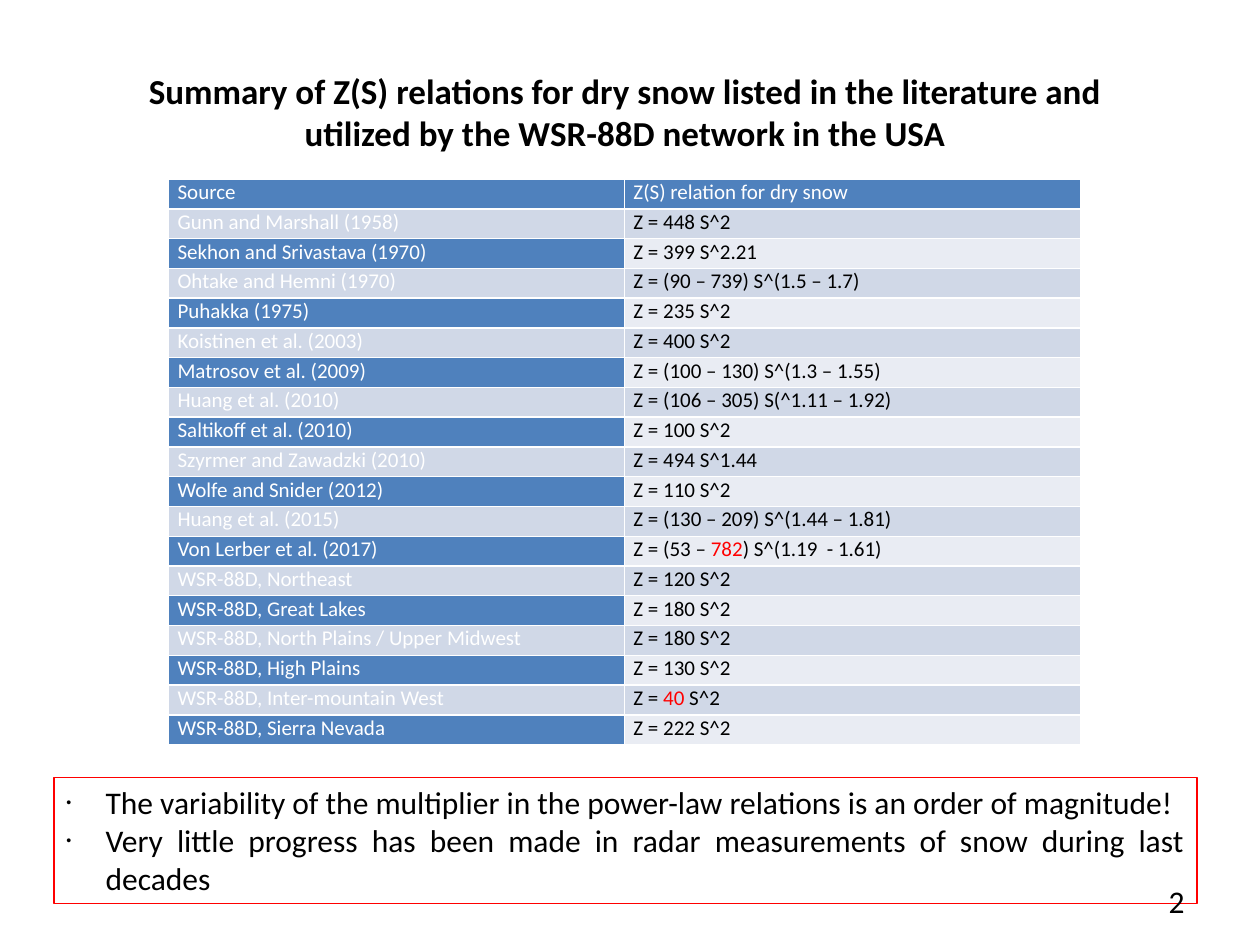
from lxml import etree
from pptx import Presentation
from pptx.dml.color import RGBColor
from pptx.enum import shapes, text
from pptx.oxml import ns
from pptx.util import Cm, Pt

FONT = "Calibri"
WHITE, BLACK, RED = "FFFFFF", "000000", "FF0000"
BLUE, BAND_DARK, BAND_LIGHT = "4F81BD", "D0D8E7", "E9ECF3"

TITLE = ("Summary of Z(S) relations for dry snow listed in the literature "
         "and utilized by the WSR-88D network in the USA")
# Text between bars is highlighted in red
RELATIONS = [
    ("Source", "Z(S) relation for dry snow"),
    ("Gunn and Marshall (1958)", "Z = 448 S^2"),
    ("Sekhon and Srivastava (1970)", "Z = 399 S^2.21"),
    ("Ohtake and Hemni (1970)", "Z = (90 – 739) S^(1.5 – 1.7)"),
    ("Puhakka (1975)", "Z = 235 S^2"),
    ("Koistinen et al. (2003)", "Z = 400 S^2"),
    ("Matrosov et al. (2009)", "Z = (100 – 130) S^(1.3 – 1.55)"),
    ("Huang et al. (2010)", "Z = (106 – 305) S(^1.11 – 1.92)"),
    ("Saltikoff et al. (2010)", "Z = 100 S^2"),
    ("Szyrmer and Zawadzki (2010)", "Z = 494 S^1.44"),
    ("Wolfe and Snider (2012)", "Z = 110 S^2"),
    ("Huang et al. (2015)", "Z = (130 – 209) S^(1.44 – 1.81)"),
    ("Von Lerber et al. (2017)", "Z = (53 – |782|) S^(1.19  - 1.61)"),
    ("WSR-88D, Northeast", "Z = 120 S^2"),
    ("WSR-88D, Great Lakes", "Z = 180 S^2"),
    ("WSR-88D, North Plains / Upper Midwest", "Z = 180 S^2"),
    ("WSR-88D, High Plains", "Z = 130 S^2"),
    ("WSR-88D, Inter-mountain West", "Z = |40| S^2"),
    ("WSR-88D, Sierra Nevada", "Z = 222 S^2"),
]
CONCLUSIONS = [
    "The variability of the multiplier in the power-law relations is an order of magnitude!",
    "Very little progress has been made in radar measurements of snow during last decades",
]


def rgb(value):
    return RGBColor.from_string(value)


def add_run(p, words, size, color=BLACK, bold=False):
    r = p.add_run()
    r.text = words
    r.font.name, r.font.size, r.font.bold = FONT, Pt(size), bold
    r.font.color.rgb = rgb(color)


def add_borders(cell, color, width):
    tc_pr = cell._tc.get_or_add_tcPr()
    for side in ("lnL", "lnR", "lnT", "lnB"):
        ln = etree.SubElement(tc_pr, ns.qn("a:" + side), w=str(Pt(width)))
        fill = etree.SubElement(ln, ns.qn("a:solidFill"))
        etree.SubElement(fill, ns.qn("a:srgbClr"), val=color)


def add_bullet(p, indent, percent):
    p_pr = p._p.get_or_add_pPr()
    p_pr.set("marL", str(indent))
    p_pr.set("indent", str(-indent))
    color = etree.SubElement(p_pr, ns.qn("a:buClr"))
    etree.SubElement(color, ns.qn("a:srgbClr"), val=BLACK)
    etree.SubElement(p_pr, ns.qn("a:buSzPct"), val=str(percent * 1000))
    etree.SubElement(p_pr, ns.qn("a:buFont"), typeface="Arial")
    etree.SubElement(p_pr, ns.qn("a:buChar"), char="•")


def place_title(s, left, top, width, height):
    sp = s.shapes.title
    sp.left, sp.top, sp.width, sp.height = left, top, width, height
    tf = sp.text_frame
    tf.word_wrap = True
    tf.auto_size = text.MSO_AUTO_SIZE.NONE
    tf.vertical_anchor = text.MSO_ANCHOR.TOP
    p = tf.paragraphs[0]
    p.alignment = text.PP_ALIGN.CENTER
    add_run(p, TITLE, 20, bold=True)


def fill_cell(cell, words, fill, color):
    add_borders(cell, WHITE, 0.9)
    cell.fill.solid()
    cell.fill.fore_color.rgb = rgb(fill)
    cell.margin_left = cell.margin_right = Cm(0.18)
    cell.margin_top = cell.margin_bottom = 0
    p = cell.text_frame.paragraphs[0]
    p.line_spacing = 1.02
    for i, part in enumerate(words.split("|")):
        add_run(p, part, 12, RED if i % 2 else color)


def place_table(s, left, top, width, height):
    table = s.shapes.add_table(len(RELATIONS), 2, left, top, width, height).table
    for column in table.columns:
        column.width = width // 2
    for i, (source, relation) in enumerate(RELATIONS):
        table.rows[i].height = height // len(RELATIONS)
        # Odd rows share one band; the others have a blue source cell
        odd = i % 2 == 1
        band = BAND_DARK if odd else BAND_LIGHT
        fill_cell(table.cell(i, 0), source, band if odd else BLUE, WHITE)
        fill_cell(table.cell(i, 1), relation,
                  band if i else BLUE, BLACK if i else WHITE)


def place_conclusions(s, left, top, width, height):
    sp = s.shapes.add_shape(shapes.MSO_SHAPE.RECTANGLE, left, top, width, height)
    sp.shadow.inherit = False
    sp.fill.solid()
    sp.fill.fore_color.rgb = rgb(WHITE)
    sp.line.color.rgb = rgb(RED)
    sp.line.width = Pt(0.75)
    tf = sp.text_frame
    tf.word_wrap = True
    tf.vertical_anchor = text.MSO_ANCHOR.TOP
    for i, words in enumerate(CONCLUSIONS):
        p = tf.add_paragraph() if i else tf.paragraphs[0]
        p.alignment = text.PP_ALIGN.JUSTIFY
        add_bullet(p, Cm(0.79), 45)
        add_run(p, words, 18)


def place_number(s, left, top, width, height):
    tf = s.shapes.add_textbox(left, top, width, height).text_frame
    tf.word_wrap = True
    p = tf.paragraphs[0]
    p.alignment = text.PP_ALIGN.RIGHT
    add_run(p, "2", 18)


def main():
    prs = Presentation()
    prs.slide_width, prs.slide_height = Cm(25.4), Cm(19.05)
    s = prs.slides.add_slide(prs.slide_layouts[5])
    place_table(s, Cm(3.4), Cm(3.61), Cm(18.38), Cm(11.4))
    place_title(s, Cm(1.8), Cm(1.27), Cm(21.6), Cm(1.96))
    place_conclusions(s, Cm(1.09), Cm(15.67), Cm(23.04), Cm(2.54))
    place_number(s, Cm(18.21), Cm(17.65), Cm(5.92), Cm(1.02))
    prs.save("out.pptx")


if __name__ == "__main__":
    main()
